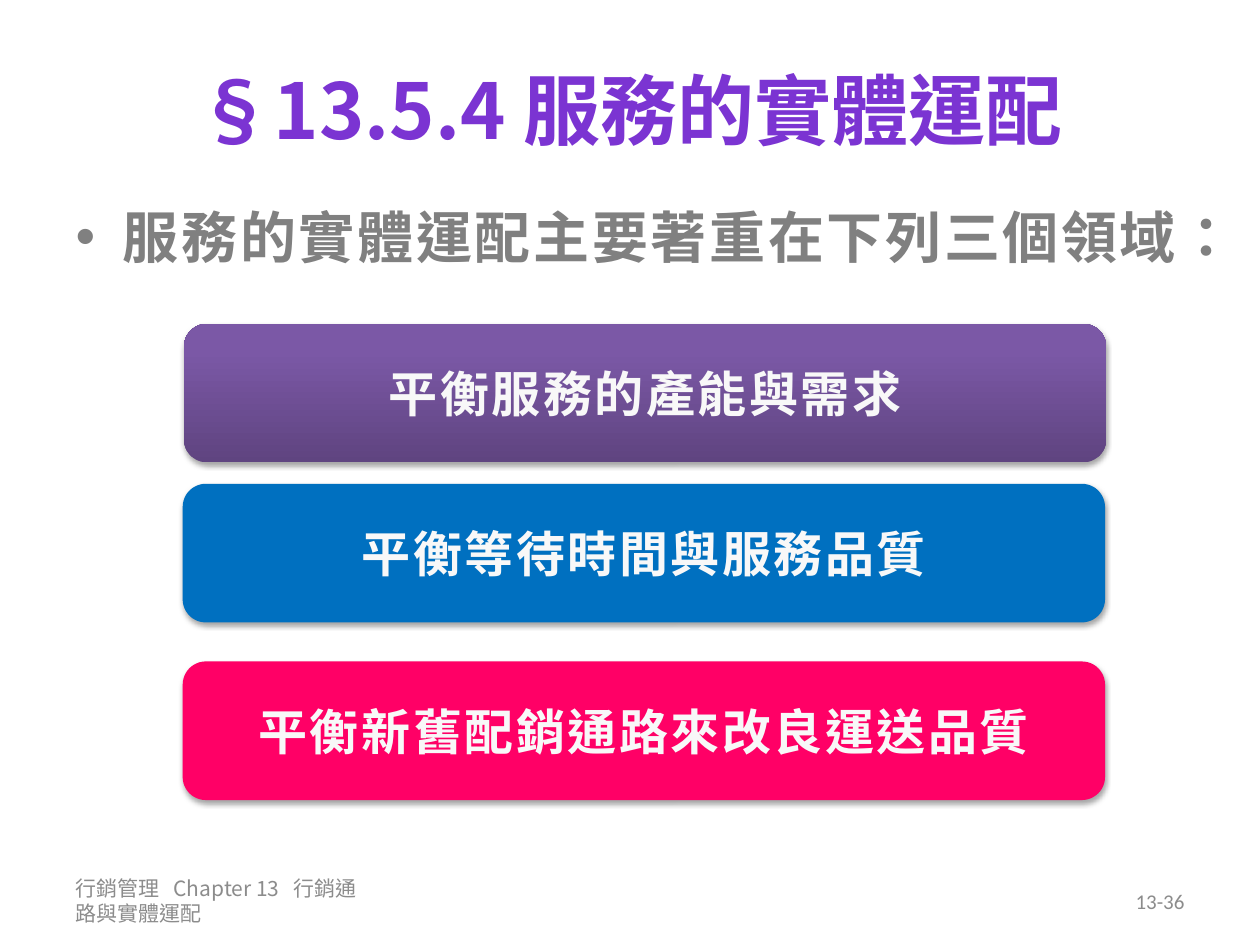
from lxml import etree
from pptx import Presentation
from pptx import util as u
from pptx.dml.color import RGBColor
from pptx.enum import shapes, text
from pptx.oxml import parse_xml
from pptx.oxml.ns import nsdecls, qn

PURPLE = RGBColor(0x7B, 0x34, 0xD2)
GREY = RGBColor(0x80, 0x80, 0x80)
FOOTER_GREY = RGBColor(0x8C, 0x8C, 0x8C)
OFF_WHITE = RGBColor(0xF8, 0xF8, 0xF8)
BLUE = RGBColor(0x00, 0x70, 0xC0)
PINK = RGBColor(0xFF, 0x00, 0x66)
VIOLET_STOPS = [(0, RGBColor(0x5F, 0x44, 0x80)),
                (80, RGBColor(0x7B, 0x58, 0xA6)),
                (100, RGBColor(0x7C, 0x57, 0xA8))]

LATIN = "Calibri"
CJK = "Noto Sans CJK SC"

# Wording, left, top and fill of each service area
AREAS = [("平衡服務的產能與需求", 1.46, 2.57, VIOLET_STOPS),
         ("平衡等待時間與服務品質", 1.45, 3.84, BLUE),
         ("平衡新舊配銷通路來改良運送品質", 1.45, 5.25, PINK)]


def place(shape, left, top, width, height):
    shape.left, shape.top = u.Inches(left), u.Inches(top)
    shape.width, shape.height = u.Inches(width), u.Inches(height)


def write(shape, wording, formats, align=None, anchor=text.MSO_ANCHOR.MIDDLE,
          spacing=0):
    """Put one formatted paragraph into a shape."""
    frame = shape.text_frame
    frame.word_wrap = True
    frame.auto_size = text.MSO_AUTO_SIZE.NONE
    frame.vertical_anchor = anchor
    para = frame.paragraphs[0]
    para.alignment = align
    span = para.add_run()
    span.text = wording
    color = formats["color"]
    for name, value in formats.items():
        if name != "color":
            setattr(span.font, name, value)
    span.font.color.rgb = color
    properties = span.font._element
    properties.set("lang", "zh-TW")
    if spacing:
        properties.set("spc", str(int(spacing * 100)))
    east_asian = etree.Element(qn("a:ea"), typeface=CJK)
    properties.find(qn("a:latin")).addnext(east_asian)
    return para


def fill_gradient(shape, stops):
    """Fill a shape with a gradient running from bottom to top."""
    marks = "".join(f'<a:gs pos="{position * 1000}"><a:srgbClr val="{color}"/></a:gs>'
                    for position, color in stops)
    shape.fill.background()
    old = shape._element.spPr.find(qn("a:noFill"))
    old.getparent().replace(old, parse_xml(
        f'<a:gradFill {nsdecls("a")} rotWithShape="1"><a:gsLst>{marks}</a:gsLst>'
        '<a:lin ang="16200000" scaled="0"/></a:gradFill>'))


def add_shadow(shape):
    shape.shadow.inherit = False
    effects = shape._element.spPr.find(qn("a:effectLst"))
    effects.append(parse_xml(
        f'<a:outerShdw {nsdecls("a")} blurRad="{u.Pt(3.1)}" dist="{u.Pt(1.8)}" '
        'dir="5400000" rotWithShape="0"><a:srgbClr val="000000">'
        '<a:alpha val="35000"/></a:srgbClr></a:outerShdw>'))


def add_area(page, wording, left, top, fill):
    box = page.shapes.add_shape(shapes.MSO_SHAPE.ROUNDED_RECTANGLE, 0, 0, 0, 0)
    place(box, left, top, 7.32, 1.1)
    box.line.fill.background()
    if isinstance(fill, list):
        fill_gradient(box, fill)
    else:
        box.fill.solid()
        box.fill.fore_color.rgb = fill
    add_shadow(box)
    write(box, wording,
          {"size": u.Pt(28), "bold": True, "name": LATIN, "color": OFF_WHITE},
          text.PP_ALIGN.CENTER, spacing=1.5)


def add_footer(page, wording, left, width, font, align):
    box = page.shapes.add_textbox(0, 0, 0, 0)
    place(box, left, 6.95, width, 0.4)
    write(box, wording,
          {"size": u.Pt(12), "name": font, "color": FOOTER_GREY}, align)


def main():
    deck = Presentation()
    deck.slide_width, deck.slide_height = u.Inches(10), u.Inches(7.5)
    page = deck.slides.add_slide(deck.slide_layouts[1])

    # Title
    title = page.shapes.title
    place(title, 0.5, 0.22, 9, 1.28)
    write(title, "§13.5.4 服務的實體運配",
          {"size": u.Pt(44), "bold": True, "name": CJK, "color": PURPLE},
          text.PP_ALIGN.CENTER)

    # Lead-in bullet
    body = page.placeholders[1]
    place(body, 0.5, 1.56, 9, 1.16)
    write(body, "服務的實體運配主要著重在下列三個領域：",
          {"size": u.Pt(32), "bold": True, "name": LATIN, "color": GREY},
          anchor=text.MSO_ANCHOR.TOP, spacing=1.5)

    # Footer and page number
    add_footer(page, "行銷管理   Chapter 13   行銷通路與實體運配", 0.5, 2.45,
               CJK, text.PP_ALIGN.LEFT)
    add_footer(page, "13-36", 7.17, 2.33, LATIN, text.PP_ALIGN.RIGHT)

    # Three service areas
    for area in AREAS:
        add_area(page, *area)

    deck.save("out.pptx")


if __name__ == "__main__":
    main()
